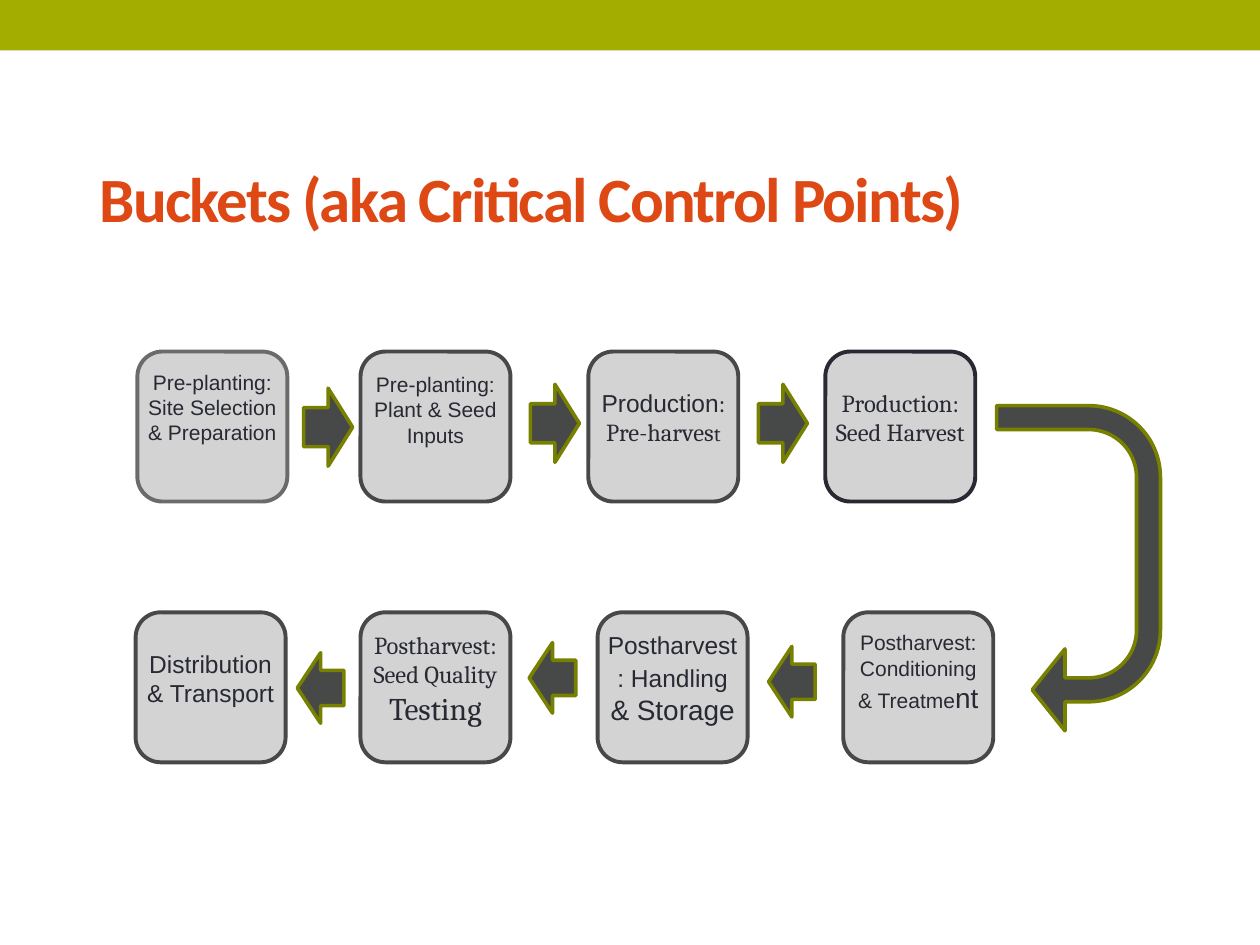
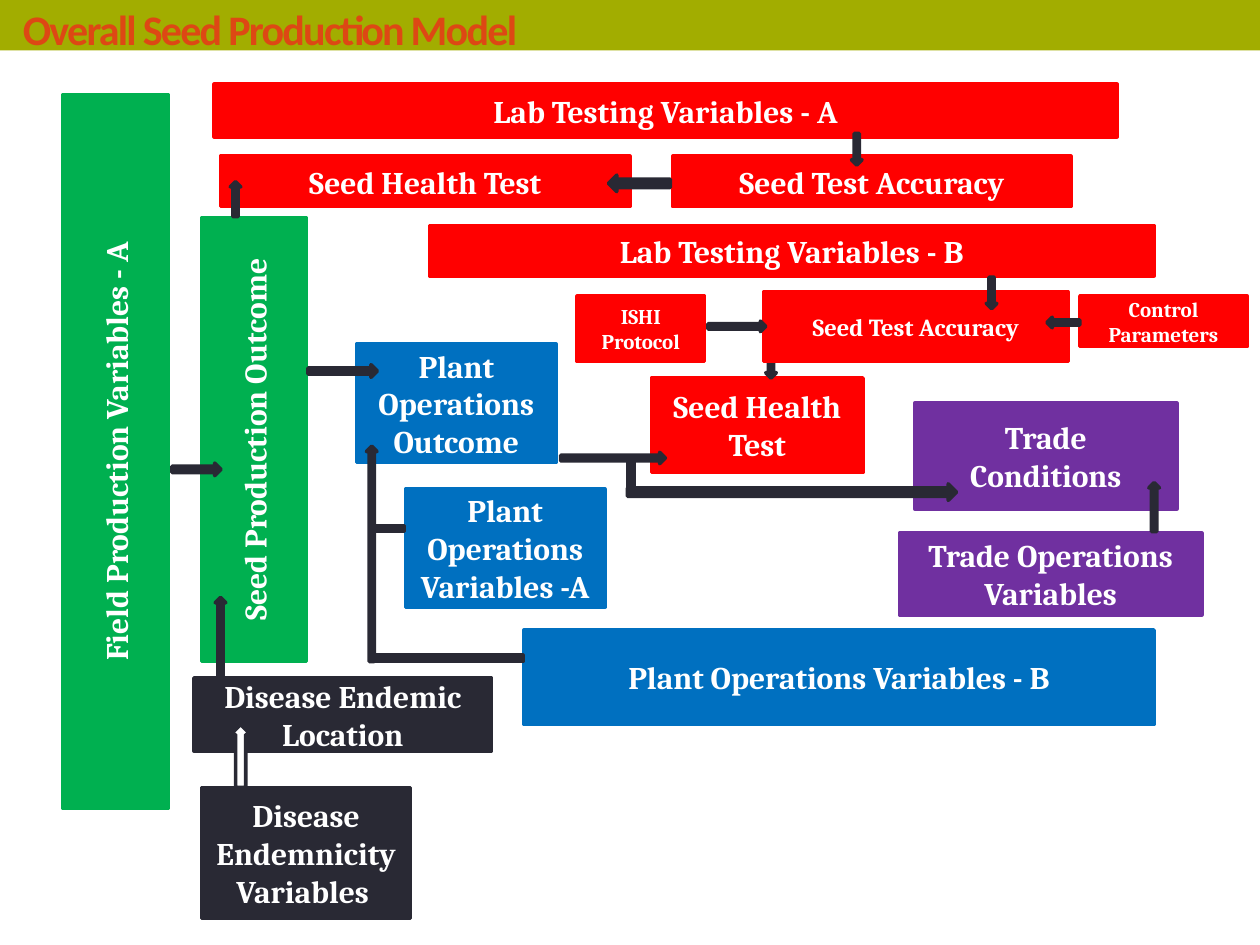
from pptx import Presentation
from pptx.dml.color import RGBColor
from pptx.enum.shapes import MSO_SHAPE
from pptx.enum.text import MSO_ANCHOR, MSO_AUTO_SIZE, PP_ALIGN
from pptx.util import Pt

OLIVE = RGBColor(0xA2, 0xAD, 0x00)
DARK_OLIVE = RGBColor(0x78, 0x80, 0x00)
ORANGE = RGBColor(0xDD, 0x48, 0x14)
INK = RGBColor(0x29, 0x29, 0x34)
CHARCOAL = RGBColor(0x47, 0x48, 0x48)
GRAY = RGBColor(0x6A, 0x6C, 0x6B)
SILVER = RGBColor(0xD2, 0xD3, 0xD2)
WHITE = RGBColor(0xFF, 0xFF, 0xFF)
RED = RGBColor(0xFF, 0x00, 0x00)
GREEN = RGBColor(0x00, 0xB0, 0x50)
BLUE = RGBColor(0x00, 0x70, 0xC0)
PURPLE = RGBColor(0x70, 0x30, 0xA0)

DOWN, LEFT, UP, RIGHT = 0, 90, 180, 270
STEPS = {DOWN: (0, 1), LEFT: (-1, 0), UP: (0, -1), RIGHT: (1, 0)}
SANS, SERIF = "Arial", "Cambria"
CARD = 85.7
CARD_TEXT = 90

TOP_CARDS = [
    (78.5, 6.5, GRAY, [("Pre-planting: Site Selection & Preparation", 12, SANS)]),
    (206, 8, CHARCOAL, [("Pre-planting: Plant & Seed Inputs", 12, SANS)]),
    (336.2, 17.3, CHARCOAL, [("Production", 14, SANS), (": Pre-harves", 14, SERIF), ("t", 12, SERIF)]),
    (471.6, 17.3, INK, [("Production: Seed Harvest", 14, SERIF)]),
]
BOTTOM_CARDS = [
    (481.9, 6.5, CHARCOAL, [("Postharvest: Conditioning & Treatme", 12, SANS), ("nt", 16, SANS)]),
    (341.5, 6.5, CHARCOAL, [("Postharvest: Handling", 14, SANS), (" & Storage", 16, SANS)]),
    (206, 6.5, CHARCOAL, [("Postharvest: Seed Quality ", 14, SERIF), ("Testing", 18, SERIF)]),
    (77.5, 17.3, CHARCOAL, [("Distribution & Transport", 14, SANS)]),
]
STEP_ARROWS = [
    (173.5, 221.8, 28, 44.6, 0), (303.1, 219.6, 28, 44.6, 0), (433.4, 219.6, 28, 44.6, 0),
    (439.2, 369.4, 26.6, 40.3, 180), (302.4, 367.2, 26.6, 40.3, 180), (169.9, 373, 26.6, 40.3, 180),
]

MODEL_BOXES = [
    ("Field Production Variables - A", GREEN, 36, 54, 60, 408, 18),
    ("Seed Production Outcome", GREEN, 115.2, 124.6, 60, 253.4, 18),
    ("Lab Testing Variables - A", RED, 122.4, 48.2, 516, 30, 18),
    ("Seed Health Test", RED, 126, 89.3, 234, 28.8, 18),
    ("Seed Test Accuracy", RED, 384.5, 89.3, 227.5, 28.8, 18),
    ("Lab Testing Variables - B", RED, 245.5, 128.9, 414, 28.8, 18),
    ("ISHI Protocol", RED, 329.8, 169.2, 72.7, 37.4, 12),
    ("Control Parameters", RED, 617, 169.2, 95.8, 28.8, 12),
    ("Seed Health Test", RED, 372.2, 216, 121, 54, 18),
    ("Plant Operations Outcome", BLUE, 203.8, 196.6, 114, 67.7, 18),
    ("Plant Operations Variables -A", BLUE, 231.8, 279.4, 113.8, 67.7, 18),
    ("Plant Operations Variables - B", BLUE, 299.5, 360, 360, 54, 18),
    ("Trade Conditions", PURPLE, 522.7, 230.4, 149.8, 60.5, 18),
    ("Trade Operations Variables", PURPLE, 514, 304.6, 172.8, 46.8, 18),
    ("Disease Endemic Location", INK, 110.9, 387.4, 170, 41.8, 18),
    ("Disease Endemnicity\nVariables ", INK, 115.2, 450, 119.5, 74.9, 18),
]
FLOWS = [
    (98.3, 268.2, 28, 7.2, RIGHT),
    (134.6, 123.8, 20, 6, UP),
    (383, 104.8, 35.3, 9.4, LEFT),
    (489.6, 76.3, 18, 6, DOWN),
    (176, 212, 39.6, 7.2, RIGHT),
    (320.4, 261.7, 59.8, 6.5, RIGHT),
    (126, 387.4, 46, 6, UP),
    (566.6, 158.4, 18, 6, DOWN),
    (617, 184.3, 18.7, 6, LEFT),
    (404.6, 186.5, 33, 6, RIGHT),
    (212.4, 378, 123, 6, UP),
    (358.6, 281.2, 188, 9.4, RIGHT),
    (659.5, 303.8, 28, 6, UP),
]
BRANCHES = [(358.6, 261.4, 3.6, 19.4), (213.1, 374.4, 85.7, 3.6), (212.4, 300.2, 18.7, 3.6)]


class Deck:
    """Hold the shared style and draw elements on the current slide."""

    def __init__(self):
        self.prs = Presentation()
        self.prs.slide_width, self.prs.slide_height = Pt(720), Pt(540)

    def slide(self, title, x, y, w, h, size):
        self.s = self.prs.slides.add_slide(self.prs.slide_layouts[5])
        band = self.shape(MSO_SHAPE.RECTANGLE, 0, 0, 720, 28.8, OLIVE)
        self.s.shapes._spTree.insert(2, band._element)
        sp = self.s.shapes.title
        sp.left, sp.top, sp.width, sp.height = Pt(x), Pt(y), Pt(w), Pt(h)
        tf = sp.text_frame
        tf.text = title
        tf.auto_size = MSO_AUTO_SIZE.NONE
        tf.vertical_anchor = MSO_ANCHOR.MIDDLE
        p = tf.paragraphs[0]
        p.alignment = PP_ALIGN.LEFT
        self.style(p.runs[0], size, "Calibri", ORANGE, True)
        p.runs[0]._r.get_or_add_rPr().set("spc", "-100")

    def style(self, r, size, font, color, bold=False):
        r.font.size, r.font.name, r.font.bold = Pt(size), font, bold
        r.font.color.rgb = color

    def shape(self, kind, x, y, w, h, fill, line=None, weight=2.08, turn=0):
        sp = self.s.shapes.add_shape(kind, Pt(x), Pt(y), Pt(w), Pt(h))
        sp.shadow.inherit = False
        sp.fill.solid()
        sp.fill.fore_color.rgb = fill
        if line is None:
            sp.line.fill.background()
        else:
            sp.line.color.rgb = line
            sp.line.width = Pt(weight)
        sp.rotation = turn
        return sp

    def card(self, x, y, text_drop, border, runs):
        self.shape(MSO_SHAPE.FLOWCHART_ALTERNATE_PROCESS, x, y, CARD, CARD, SILVER, border, 2.25)
        left = x + (CARD - CARD_TEXT) / 2
        tb = self.s.shapes.add_textbox(Pt(left), Pt(y + text_drop), Pt(CARD_TEXT), Pt(55))
        tb.text_frame.word_wrap = True
        p = tb.text_frame.paragraphs[0]
        p.alignment = PP_ALIGN.CENTER
        for text, size, font in runs:
            r = p.add_run()
            r.text = text
            self.style(r, size, font, INK)

    def box(self, text, color, x, y, w, h, size):
        sp = self.shape(MSO_SHAPE.RECTANGLE, x, y, w, h, color, color)
        tf = sp.text_frame
        tf.text = text
        tf.word_wrap = True
        tf.vertical_anchor = MSO_ANCHOR.MIDDLE
        if color == GREEN:
            tf._txBody.bodyPr.set("vert", "vert270")
        for p in tf.paragraphs:
            p.alignment = PP_ALIGN.CENTER
            self.style(p.runs[0], size, SERIF, WHITE, True)

    def flow(self, tail_x, tail_y, length, thickness, turn, fill=INK):
        dx, dy = STEPS[turn]
        x = tail_x + dx * length / 2 - thickness / 2
        y = tail_y + dy * length / 2 - length / 2
        self.shape(MSO_SHAPE.DOWN_ARROW, x, y, thickness, length, fill, INK, turn=turn)


def buckets(deck):
    deck.slide("Buckets (aka Critical Control Points)", 49.7, 87.8, 620.6, 50.4, 36)
    for top, cards in ((200.9, TOP_CARDS), (349.9, BOTTOM_CARDS)):
        for x, drop, border, runs in cards:
            deck.card(x, top, drop, border, runs)
    bend = deck.shape(MSO_SHAPE.U_TURN_ARROW, 523.4, 277.9, 185.8, 93.6, CHARCOAL, DARK_OLIVE, turn=90)
    for i, value in enumerate((0.146, 0.25, 0.2, 0.438, 0.783)):
        bend.adjustments[i] = value
    for x, y, w, h, turn in STEP_ARROWS:
        deck.shape(MSO_SHAPE.RIGHT_ARROW, x, y, w, h, CHARCOAL, DARK_OLIVE, turn=turn)


def model(deck):
    deck.slide("Overall Seed Production Model", 5.8, -5, 373.7, 42.5, 24)
    for item in MODEL_BOXES:
        deck.box(*item)
    deck.flow(440.6, 198, 18, 6, DOWN)
    deck.box("Seed Test Accuracy", RED, 436.3, 167, 174.2, 39.6, 14)
    for item in FLOWS:
        deck.flow(*item)
    deck.flow(137.5, 450, 36, 11.5, UP, WHITE)
    for x, y, w, h in BRANCHES:
        deck.shape(MSO_SHAPE.RECTANGLE, x, y, w, h, INK, INK)


def main():
    deck = Deck()
    buckets(deck)
    model(deck)
    deck.prs.save("out.pptx")


if __name__ == "__main__":
    main()
